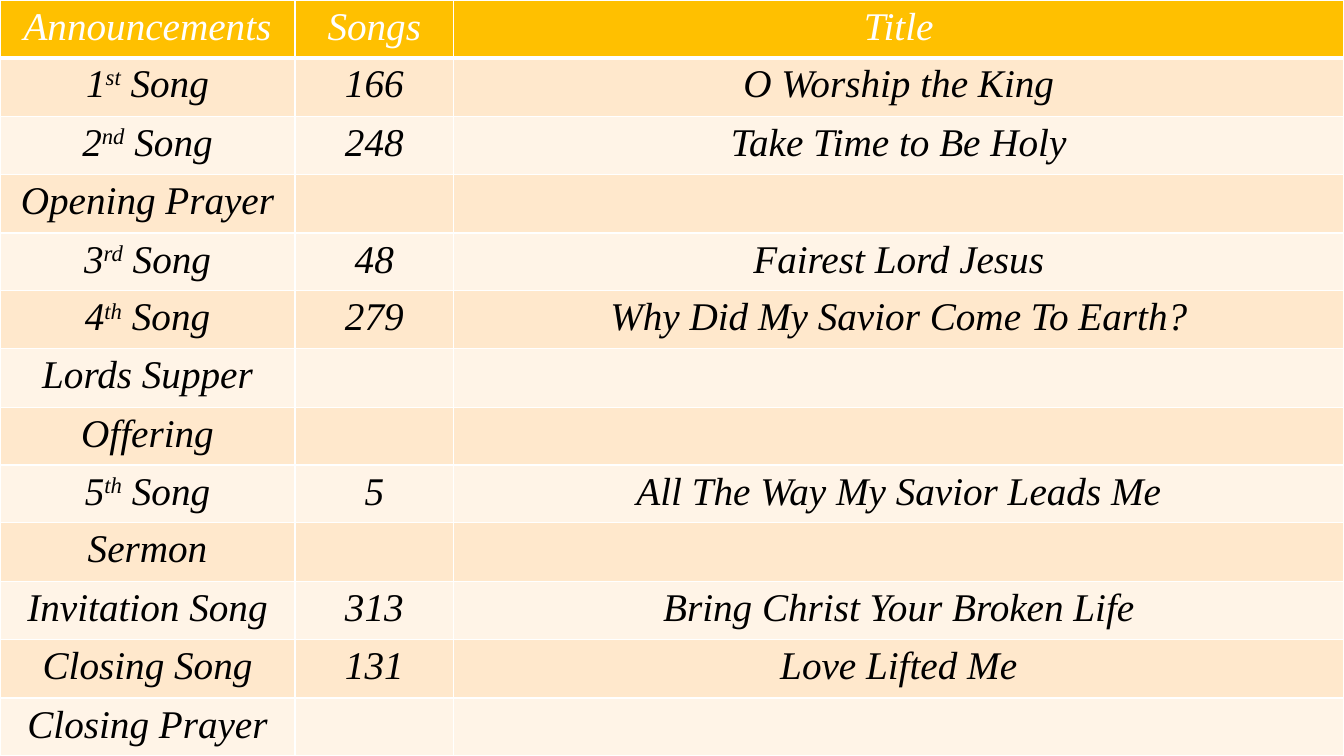
"""Builds a one-slide order of worship as a full-page table."""
from dataclasses import dataclass

from lxml import etree
from pptx import Presentation
from pptx import util as u
from pptx.dml.color import RGBColor
from pptx.enum import text
from pptx.oxml import ns

PX = 9525
SLIDE_WIDTH, SLIDE_HEIGHT = 1280, 720
COLUMN_WIDTHS = (281, 151, 848)


@dataclass(frozen=True)
class Theme:
    font: str = "Times New Roman"
    size: int = 28
    superscript: int = 30
    header_fill: str = "FFC000"
    header_text: str = "FFFFFF"
    body_text: str = "000000"
    bands: tuple[str, str] = ("FFE8CC", "FFF4E7")
    border: str = "FFFFFF"
    border_width: int = 1
    header_rule: int = 3


@dataclass(frozen=True)
class Item:
    label: str
    number: str = ""
    title: str = ""
    ordinal: tuple[str, str] | None = None


@dataclass(frozen=True)
class RowStyle:
    fill: str
    color: str
    bottom: int


THEME = Theme()
ITEMS = (
    Item("Announcements", "Songs", "Title"),
    Item(" Song", "166", "O Worship the King", ("1", "st")),
    Item(" Song", "248", "Take Time to Be Holy", ("2", "nd")),
    Item("Opening Prayer"),
    Item(" Song", "48", "Fairest Lord Jesus", ("3", "rd")),
    Item(" Song", "279", "Why Did My Savior Come To Earth?", ("4", "th")),
    Item("Lords Supper"),
    Item("Offering"),
    Item(" Song", "5", "All The Way My Savior Leads Me", ("5", "th")),
    Item("Sermon"),
    Item("Invitation Song", "313", "Bring Christ Your Broken Life"),
    Item("Closing Song", "131", "Love Lifted Me"),
    Item("Closing Prayer"),
)


def px(length: int) -> u.Emu:
    """Convert whole px to EMU."""
    return u.Emu(length * PX)


def style_for(index: int) -> RowStyle:
    """Choose the header style or one of the alternating bands."""
    if index == 0:
        return RowStyle(THEME.header_fill, THEME.header_text, THEME.header_rule)
    return RowStyle(THEME.bands[(index - 1) % 2], THEME.body_text, THEME.border_width)


def set_borders(cell, bottom: int) -> None:
    """Give a cell its four border lines."""
    properties = cell._tc.get_or_add_tcPr()
    widths = {"L": THEME.border_width, "R": THEME.border_width,
              "T": THEME.border_width, "B": bottom}
    for position, (side, width) in enumerate(widths.items()):
        line = etree.Element(ns.qn(f"a:ln{side}"), w=str(u.Pt(width)))
        fill = etree.SubElement(line, ns.qn("a:solidFill"))
        etree.SubElement(fill, ns.qn("a:srgbClr"), val=THEME.border)
        properties.insert(position, line)


def add_run(paragraph, content: str, color: str, raised: bool = False) -> None:
    """Append formatted text, raised when it is an ordinal suffix."""
    run = paragraph.add_run()
    run.text = content
    formats = {"name": THEME.font, "size": u.Pt(THEME.size), "italic": True, "bold": False}
    for name, value in formats.items():
        setattr(run.font, name, value)
    run.font.color.rgb = RGBColor.from_string(color)
    if raised:
        run._r.get_or_add_rPr().set("baseline", str(THEME.superscript * 1000))


def fill_cell(cell, parts: list[tuple[str, bool]], style: RowStyle) -> None:
    """Write and format one cell."""
    cell.fill.solid()
    cell.fill.fore_color.rgb = RGBColor.from_string(style.fill)
    set_borders(cell, style.bottom)
    paragraph = cell.text_frame.paragraphs[0]
    paragraph.alignment = text.PP_ALIGN.CENTER
    for content, raised in parts:
        if content:
            add_run(paragraph, content, style.color, raised)


def add_program(slide) -> None:
    """Draw the order of worship over the whole slide."""
    table = slide.shapes.add_table(len(ITEMS), len(COLUMN_WIDTHS), 0, 0,
                                   px(SLIDE_WIDTH), px(SLIDE_HEIGHT)).table
    for column, width in zip(table.columns, COLUMN_WIDTHS):
        column.width = px(width)
    edges = [round(index * SLIDE_HEIGHT / len(ITEMS)) for index in range(len(ITEMS) + 1)]
    for index, (row, item) in enumerate(zip(table.rows, ITEMS)):
        row.height = px(edges[index + 1] - edges[index])
        label = [(item.label, False)]
        if item.ordinal:
            digit, suffix = item.ordinal
            label = [(digit, False), (suffix, True), *label]
        contents = (label, [(item.number, False)], [(item.title, False)])
        for cell, parts in zip(row.cells, contents):
            fill_cell(cell, parts, style_for(index))


def main() -> None:
    """Create and save the presentation."""
    presentation = Presentation()
    presentation.slide_width = px(SLIDE_WIDTH)
    presentation.slide_height = px(SLIDE_HEIGHT)
    slide = presentation.slides.add_slide(presentation.slide_layouts[6])
    add_program(slide)
    presentation.save("out.pptx")


if __name__ == "__main__":
    main()
